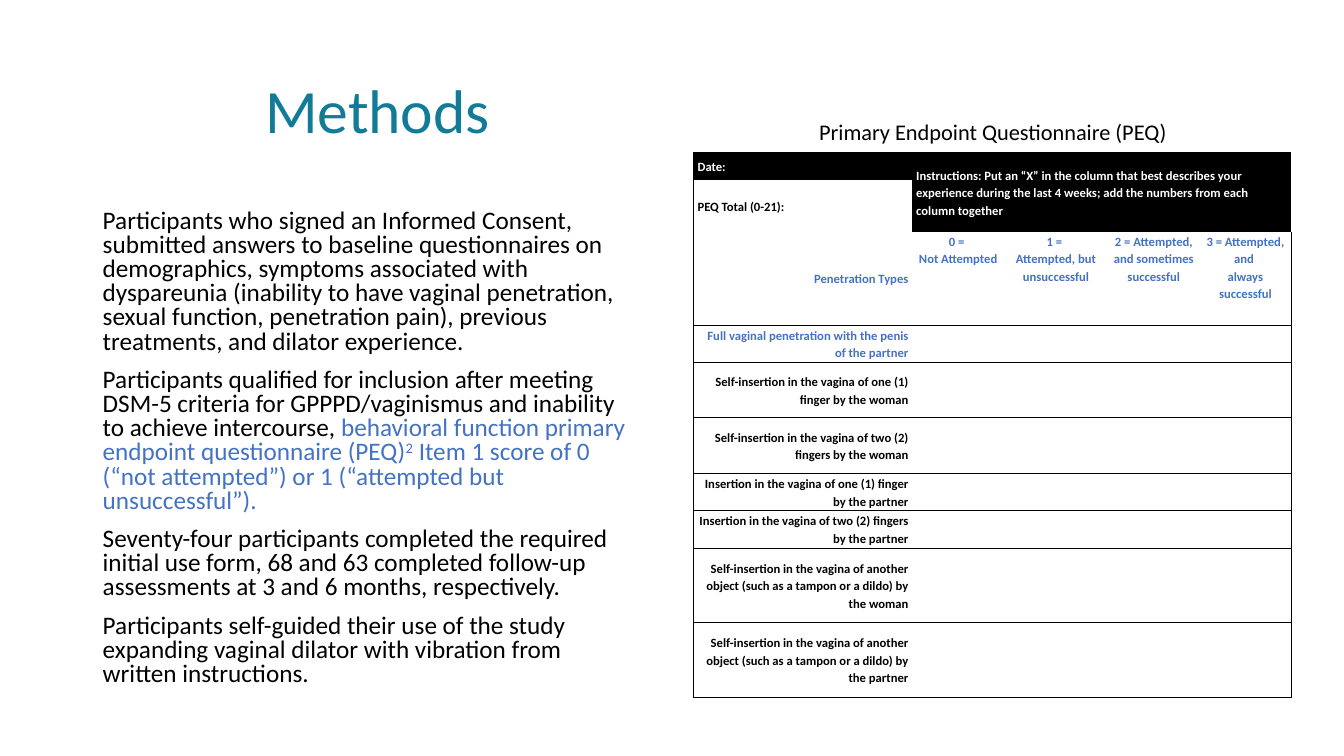
import pptx
import pptx.dml.color
import pptx.enum.text
import pptx.oxml.ns
import pptx.util
from lxml import etree

Cm, Pt = pptx.util.Cm, pptx.util.Pt
ALIGN = pptx.enum.text.PP_ALIGN
ANCHOR = pptx.enum.text.MSO_ANCHOR
qn = pptx.oxml.ns.qn

BLACK, WHITE, TEAL, BLUE = "000000", "FFFFFF", "117B98", "4472C4"

METHODS = [
    [("Participants who signed an Informed Consent, submitted answers to baseline questionnaires on "
      "demographics, symptoms associated with dyspareunia (inability to have vaginal penetration, "
      "sexual function, penetration pain), previous treatments, and dilator experience.", BLACK, False)],
    [("Participants qualified for inclusion after meeting DSM-5 criteria for GPPPD/vaginismus and "
      "inability to achieve intercourse, ", BLACK, False),
     ("behavioral function primary endpoint questionnaire (PEQ)", BLUE, False),
     ("2", BLUE, True),
     (" Item 1 score of 0 (“not attempted”) or 1 (“attempted but unsuccessful”).", BLUE, False)],
    [("Seventy-four participants completed the required initial use form, 68 and 63 completed "
      "follow-up assessments at 3 and 6 months, respectively.", BLACK, False)],
    [("Participants self-guided their use of the study expanding vaginal dilator with vibration "
      "from written instructions.", BLACK, False)],
]
INSTRUCTIONS = ("Instructions: Put an “X” in the column that best describes your experience during "
                "the last 4 weeks; add the numbers from each column together")
SCORES = ["0 = \vNot Attempted", "1 = \vAttempted, but unsuccessful",
          "2 = Attempted, and sometimes successful", "3 = Attempted, and \valways successful"]
ITEMS = [
    "Full vaginal penetration with the penis of the partner",
    "Self-insertion in the vagina of one (1) finger by the woman",
    "Self-insertion in the vagina of two (2) fingers by the woman",
    "Insertion in the vagina of one (1) finger by the partner",
    "Insertion in the vagina of two (2) fingers by the partner",
    "Self-insertion in the vagina of another object (such as a tampon or a dildo) by the woman",
    "Self-insertion in the vagina of another object (such as a tampon or a dildo) by the partner",
]
COL_WIDTHS = [5.51, 2.31, 2.62, 2.31, 2.31]
ROW_HEIGHTS = [0.69, 0.71, 2.34, 0.94, 1.4, 1.4, 0.94, 0.94, 1.88, 1.88]
FIRST_ITEM = 3


def rgb(color):
    return pptx.dml.color.RGBColor.from_string(color)


def style_run(r, size, color, bold=False):
    r.font.name = "Calibri"
    r.font.size = Pt(size)
    r.font.bold = bold
    r.font.color.rgb = rgb(color)


def add_text(slide, box, paragraphs, size, align=ALIGN.LEFT, anchor=ANCHOR.TOP,
             line_spacing=1.0, space_before=0):
    tf = slide.shapes.add_textbox(*map(Cm, box)).text_frame
    tf.word_wrap = True
    tf.vertical_anchor = anchor
    for i, runs in enumerate(paragraphs):
        p = tf.add_paragraph() if i else tf.paragraphs[0]
        p.alignment = align
        p.line_spacing = line_spacing
        if i:
            p.space_before = Pt(space_before)
        for text, color, superscript in runs:
            r = p.add_run()
            r.text = text
            style_run(r, size, color)
            if superscript:
                r.font._rPr.set("baseline", "30000")


def set_borders(cell, sides):
    tcPr = cell._tc.get_or_add_tcPr()
    for i, side in enumerate("LRTB"):
        ln = etree.Element(qn("a:ln" + side), w=str(Pt(0.5)))
        if side in sides:
            fill = etree.SubElement(ln, qn("a:solidFill"))
            etree.SubElement(fill, qn("a:srgbClr"), val=BLACK)
        else:
            etree.SubElement(ln, qn("a:noFill"))
        tcPr.insert(i, ln)


def fill_cell(cell, text, color, align=ALIGN.LEFT, anchor=ANCHOR.MIDDLE):
    cell.margin_left = cell.margin_right = Cm(0.1)
    cell.margin_top = cell.margin_bottom = 0
    cell.vertical_anchor = anchor
    cell.text_frame.text = text
    p = cell.text_frame.paragraphs[0]
    p.alignment = align
    p.line_spacing = 1.15
    p.space_after = Pt(6)
    for r in p.runs:
        style_run(r, 9, color, True)


def add_heading(slide, box):
    add_text(slide, box, [[("Methods", TEAL, False)]], 44, anchor=ANCHOR.MIDDLE, line_spacing=0.9)


def add_methods(slide, box):
    add_text(slide, box, METHODS, 18, line_spacing=0.8, space_before=10)


def add_questionnaire(slide, box):
    left, top, width, height = box
    caption_height = 1.0
    add_text(slide, (left, top, width, caption_height),
             [[("Primary Endpoint Questionnaire (PEQ)", BLACK, False)]], 16, align=ALIGN.CENTER)
    frame = slide.shapes.add_table(len(ROW_HEIGHTS), len(COL_WIDTHS), Cm(left),
                                   Cm(top + caption_height), Cm(width), Cm(height - caption_height))
    table = frame.table
    table.first_row = table.horz_banding = False
    for column, w in zip(table.columns, COL_WIDTHS):
        column.width = Cm(w)
    for row, h in zip(table.rows, ROW_HEIGHTS):
        row.height = Cm(h)

    last = len(COL_WIDTHS) - 1
    for i in range(len(ROW_HEIGHTS)):
        for j in range(len(COL_WIDTHS)):
            cell = table.cell(i, j)
            if i == 0 or (i == 1 and j > 0):
                cell.fill.solid()
                cell.fill.fore_color.rgb = rgb(BLACK)
            else:
                cell.fill.background()
            sides = {0: "L", last: "R"}.get(j, "")
            if i == 0:
                sides += "T"
            if i >= FIRST_ITEM or (i, j) == (1, 0):
                sides += "TB"
            set_borders(cell, sides)
            end = etree.SubElement(cell.text_frame.paragraphs[0]._p, qn("a:endParaRPr"))
            end.set("sz", "900")

    table.cell(0, 1).merge(table.cell(1, last))
    fill_cell(table.cell(0, 0), "Date:", WHITE)
    fill_cell(table.cell(0, 1), INSTRUCTIONS, WHITE)
    fill_cell(table.cell(1, 0), "PEQ Total (0-21):", BLACK)
    fill_cell(table.cell(2, 0), "Penetration Types", BLUE, ALIGN.RIGHT)
    for j, score in enumerate(SCORES, 1):
        fill_cell(table.cell(2, j), score, BLUE, ALIGN.CENTER, ANCHOR.TOP)
    for i, item in enumerate(ITEMS, FIRST_ITEM):
        fill_cell(table.cell(i, 0), item, BLUE if i == FIRST_ITEM else BLACK, ALIGN.RIGHT)


def main():
    prs = pptx.Presentation()
    prs.slide_width, prs.slide_height = Cm(33.87), Cm(19.05)
    slide = prs.slides.add_slide(prs.slide_layouts[6])
    add_heading(slide, (6.43, 1.02, 25.12, 3.68))
    add_methods(slide, (2.34, 5.16, 14.07, 12.45))
    add_questionnaire(slide, (17.48, 2.84, 15.09, 14.12))
    prs.save("out.pptx")


if __name__ == "__main__":
    main()
